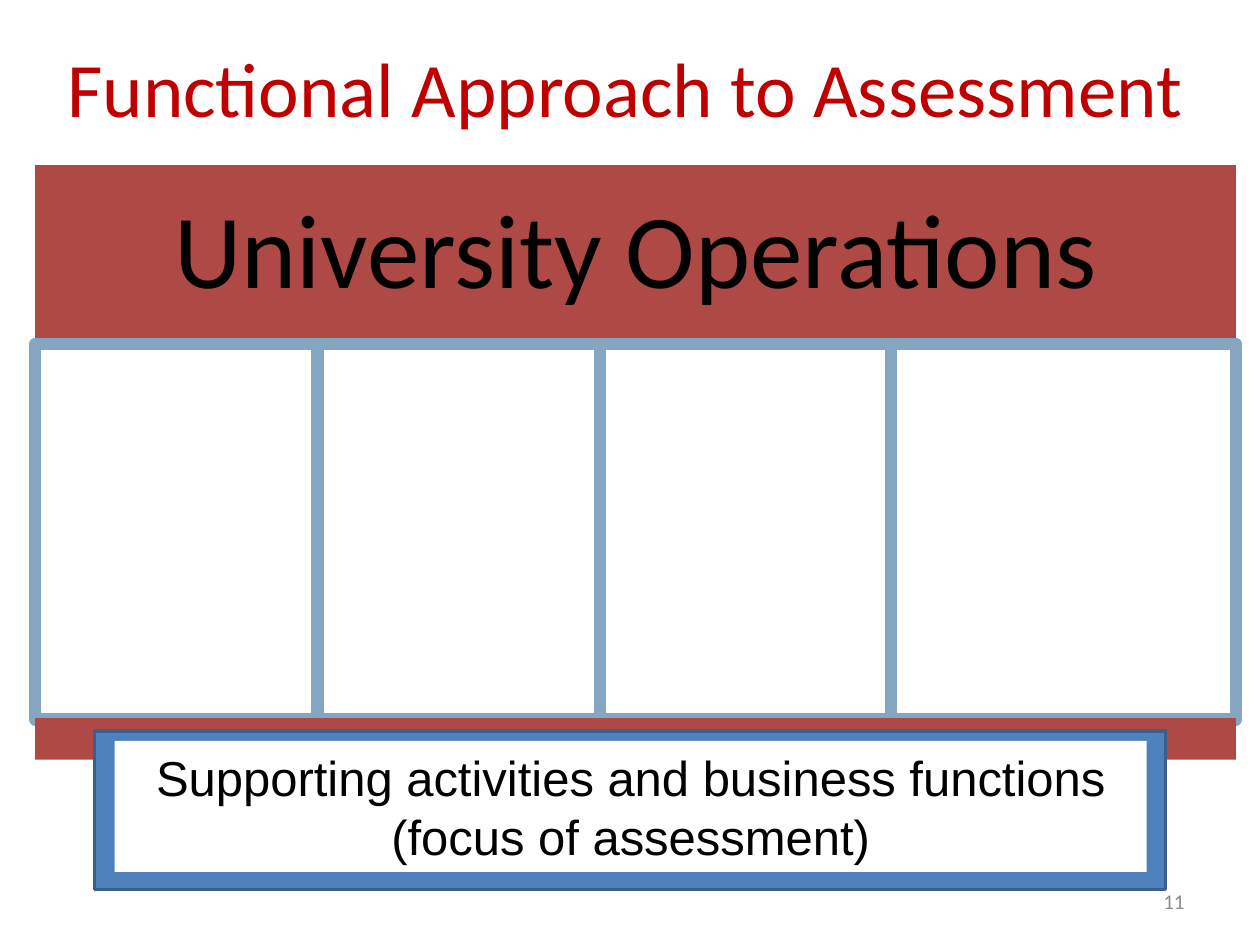
from dataclasses import dataclass

from pptx import Presentation
from pptx.dml.color import RGBColor
from pptx.enum.shapes import MSO_SHAPE
from pptx.enum.text import MSO_ANCHOR, PP_ALIGN
from pptx.util import Inches, Pt

RECT = MSO_SHAPE.RECTANGLE
MIDDLE = MSO_ANCHOR.MIDDLE
CENTER, RIGHT = PP_ALIGN.CENTER, PP_ALIGN.RIGHT


@dataclass(frozen=True)
class Theme:
    title: str = "C00000"
    band: str = "AE4946"
    grid: str = "84A6C1"
    frame: str = "4F81BD"
    edge: str = "3A5F8C"
    white: str = "FFFFFF"
    black: str = "000000"
    gray: str = "8C8C8C"
    head: str = "Calibri"
    body: str = "Arial"
    huge: int = 60
    large: int = 44
    mid: int = 28
    small: int = 12


def write(shape, text, *, font, size, color, align=CENTER, inset=None, space=None):
    """Fill a shape with text, one paragraph per line."""
    frame = shape.text_frame
    frame.word_wrap = True
    frame.vertical_anchor = MIDDLE
    if inset is not None:
        frame.margin_left = frame.margin_right = Inches(inset)
        frame.margin_top = frame.margin_bottom = Inches(inset)
    frame.text = text
    for para in frame.paragraphs:
        para.alignment = align
        if space:
            para.line_spacing = space
        for run in para.runs:
            run.font.name = font
            run.font.size = Pt(size)
            run.font.color.rgb = RGBColor.from_string(color)


class Deck:
    def __init__(self, theme, slide):
        self.theme = theme
        self.slide = slide

    def label(self, box, text, **style):
        shape = self.slide.shapes.add_textbox(*map(Inches, box))
        write(shape, text, **style)
        return shape

    def block(self, box, fill, line=None, width=1):
        shape = self.slide.shapes.add_shape(RECT, *map(Inches, box))
        shape.shadow.inherit = False
        shape.fill.solid()
        shape.fill.fore_color.rgb = RGBColor.from_string(fill)
        if line:
            shape.line.color.rgb = RGBColor.from_string(line)
            shape.line.width = Pt(width)
        else:
            shape.line.fill.background()
        return shape


def main():
    prs = Presentation()
    prs.slide_width, prs.slide_height = Inches(10), Inches(7.5)
    theme = Theme()
    deck = Deck(theme, prs.slides.add_slide(prs.slide_layouts[6]))

    # Title and page number
    deck.label((0.2, 0.3, 9.53, 0.77), "Functional Approach to Assessment",
               font=theme.head, size=theme.large, color=theme.title)
    deck.label((7.17, 6.95, 2.33, 0.4), "11", font=theme.head,
               size=theme.small, color=theme.gray, align=RIGHT)

    # Top band
    left, wide = 0.28, 9.53
    band = deck.block((left, 1.31, wide, 1.42), theme.band)
    write(band, "University Operations", font=theme.head, size=theme.huge,
          color=theme.black, inset=0.25, space=0.9)

    # Row of empty columns
    x = left
    for width in (2.24, 2.24, 2.31, 2.74):
        deck.block((x, 2.73, width, 2.98), theme.white, theme.grid, 7)
        x += width

    # Bottom band
    deck.block((left, 5.7, wide, 0.33), theme.band)

    # Framed note
    deck.block((0.75, 5.8, 8.5, 1.26), theme.frame, theme.edge, 2)
    note = deck.block((0.91, 5.88, 8.19, 1.04), theme.white)
    write(note, "Supporting activities and business functions\n(focus of assessment)",
          font=theme.body, size=theme.mid, color=theme.black)

    prs.save("out.pptx")


if __name__ == "__main__":
    main()
